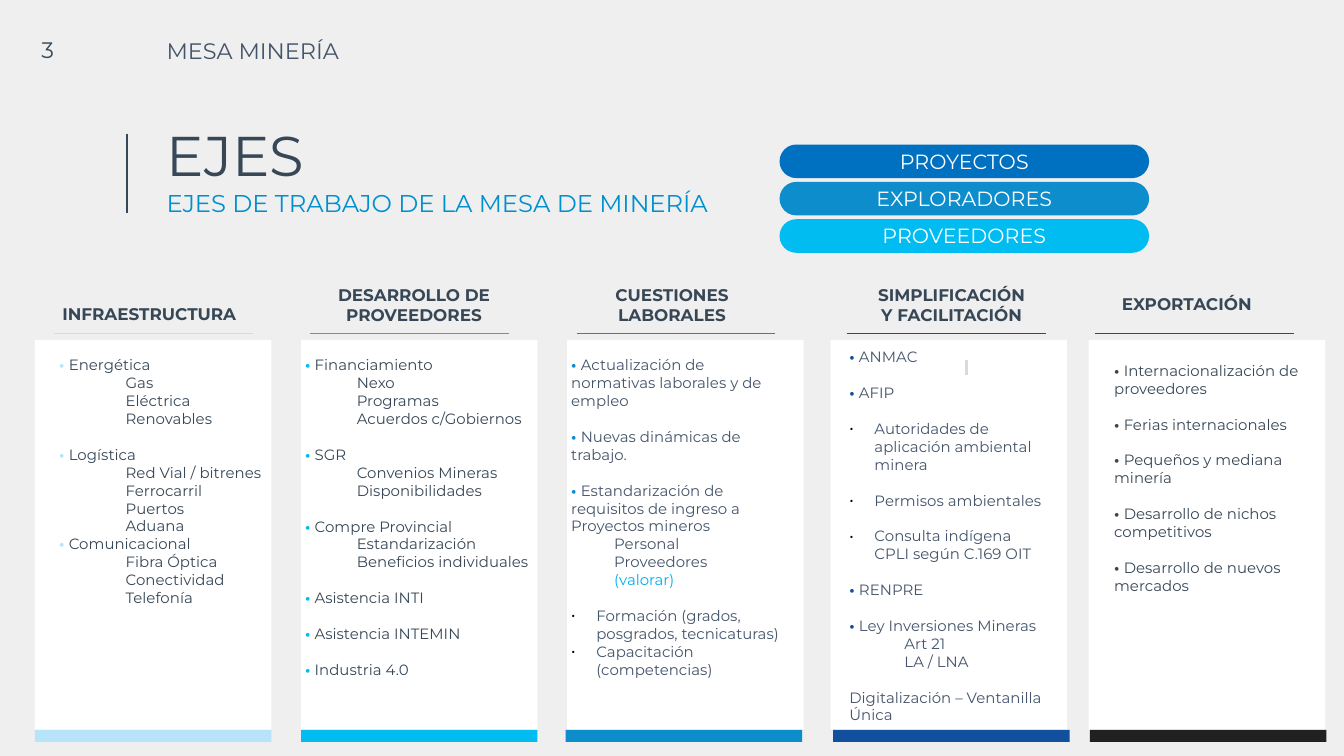
from lxml.etree import SubElement
from pptx import Presentation
from pptx.dml.color import RGBColor
from pptx.enum.shapes import MSO_CONNECTOR, MSO_SHAPE
from pptx.enum.text import MSO_ANCHOR, PP_ALIGN
from pptx.oxml.ns import qn
from pptx.util import Inches, Pt

THEME = {
    "font": "Montserrat",
    "background": "EFEFEF", "panel": "FFFFFF", "dark": "374756", "slate": "44546A",
    "subtitle": "0090D0", "note": "00B0F0", "bullet": "000000", "tick": "D9D9D9",
    "pale": "B8E4FA", "cyan": "00BCF1", "blue": "0D8DCC", "navy": "10509E",
    "black": "212121", "royal": "0070C0",
    "title_size": 30, "subtitle_size": 13, "label_size": 12, "pill_size": 11,
    "heading_size": 9, "body_size": 8, "group_gap": 9.6,
}

SLIDE_WIDTH = 10
SLIDE_HEIGHT = SLIDE_WIDTH * 9 / 16
GRID_COLUMNS = 100
UNIT = SLIDE_WIDTH / GRID_COLUMNS

PANEL = {"top": 25.3, "width": 17.6, "height": 29}
BAND = {"top": 54.3, "height": 0.9}
RULE = {"top": 24.8, "width": 14.8}
PILL = {"left": 58, "top": 10.75, "width": 27.5, "height": 2.5, "pitch": 2.78}
POINT_INDENT = 1.87

LEAD, SUB, POINT, PLAIN, NOTE = "lead", "sub", "point", "plain", "note"

PILLS = [("PROYECTOS", "royal"), ("EXPLORADORES", "blue"), ("PROVEEDORES", "cyan")]

COLUMNS = [
    {
        "heading": "INFRAESTRUCTURA", "heading_box": (3.6, 21.9, 15, 2.9),
        "panel": 2.6, "band": 2.6, "rule": 4, "body_box": (3.9, 26, 16.2, 23.5),
        "accent": "pale", "rule_color": "pale", "text_color": "dark", "sub_indent": 4.95,
        "groups": [
            [(LEAD, "Energética"), (SUB, "Gas"), (SUB, "Eléctrica"), (SUB, "Renovables")],
            [(LEAD, "Logística"), (SUB, "Red Vial / bitrenes"), (SUB, "Ferrocarril"),
             (SUB, "Puertos"), (SUB, "Aduana"), (LEAD, "Comunicacional"),
             (SUB, "Fibra Óptica"), (SUB, "Conectividad"), (SUB, "Telefonía")],
        ],
    },
    {
        "heading": "DESARROLLO DE PROVEEDORES", "heading_box": (23.1, 20.6, 15.4, 4.2),
        "panel": 22.4, "band": 22.4, "rule": 23.1, "body_box": (22.2, 26, 18.6, 26.2),
        "accent": "cyan", "rule_color": "cyan", "text_color": "dark", "sub_indent": 3.85,
        "groups": [
            [(LEAD, "Financiamiento"), (SUB, "Nexo"), (SUB, "Programas"),
             (SUB, "Acuerdos c/Gobiernos")],
            [(LEAD, "SGR"), (SUB, "Convenios Mineras"), (SUB, "Disponibilidades")],
            [(LEAD, "Compre Provincial"), (SUB, "Estandarización"),
             (SUB, "Beneficios individuales")],
            [(LEAD, "Asistencia INTI")],
            [(LEAD, "Asistencia INTEMIN")],
            [(LEAD, "Industria 4.0")],
        ],
    },
    {
        "heading": "CUESTIONES LABORALES", "heading_box": (42.3, 20.6, 15.4, 4.2),
        "panel": 42.2, "band": 42.1, "rule": 42.9, "body_box": (42, 26, 17.2, 26.3),
        "accent": "blue", "rule_color": "blue", "text_color": "slate", "sub_indent": 3.2,
        "groups": [
            [(LEAD, "Actualización de normativas laborales y de empleo")],
            [(LEAD, "Nuevas dinámicas de trabajo.")],
            [(LEAD, "Estandarización de requisitos de ingreso a Proyectos mineros"),
             (SUB, "Personal"), (SUB, "Proveedores"), (NOTE, "(valorar)")],
            [(POINT, "Formación (grados, posgrados, tecnicaturas)"),
             (POINT, "Capacitación (competencias)")],
        ],
    },
    {
        "heading": "SIMPLIFICACIÓN\nY FACILITACIÓN", "heading_box": (63.1, 20.6, 15.4, 4.2),
        "panel": 61.8, "band": 62, "rule": 63, "body_box": (62.7, 25.4, 15.4, 28.7),
        "accent": "navy", "rule_color": "navy", "text_color": "slate", "sub_indent": 4.1,
        "groups": [
            [(LEAD, "ANMAC")],
            [(LEAD, "AFIP")],
            [(POINT, "Autoridades de aplicación ambiental minera")],
            [(POINT, "Permisos ambientales")],
            [(POINT, "Consulta indígena CPLI según C.169 OIT")],
            [(LEAD, "RENPRE")],
            [(LEAD, "Ley Inversiones Mineras"), (SUB, "Art 21"), (SUB, "LA / LNA")],
            [(PLAIN, "Digitalización – Ventanilla Única")],
        ],
    },
    {
        "heading": "EXPORTACIÓN", "heading_box": (78.6, 20.5, 19.4, 4.2),
        "panel": 81, "band": 81.1, "rule": 81.5, "body_box": (82.4, 26.4, 15.4, 23.1),
        "accent": "black", "rule_color": "navy", "text_color": "dark", "sub_indent": 0,
        "lead_color": "dark",
        "groups": [
            [(LEAD, "Internacionalización de proveedores")],
            [(LEAD, "Ferias internacionales")],
            [(LEAD, "Pequeños y mediana minería")],
            [(LEAD, "Desarrollo de nichos competitivos")],
            [(LEAD, "Desarrollo de nuevos mercados")],
        ],
    },
]


def grid(value):
    return Inches(value * UNIT)


def color(name):
    return RGBColor.from_string(THEME[name])


def apply_format(target, values):
    for name, value in values.items():
        setattr(target, name, value)


def add_run(paragraph, text, size, color_name, bold=False):
    for index, line in enumerate(text.split("\n")):
        if index:
            paragraph.add_line_break()
        run = paragraph.add_run()
        run.text = line
        apply_format(run.font, {"name": THEME["font"], "size": Pt(THEME[size]), "bold": bold})
        run.font.color.rgb = color(color_name)


def add_text_box(slide, box, inset=0.5, anchor=MSO_ANCHOR.TOP):
    frame = slide.shapes.add_textbox(*map(grid, box)).text_frame
    margins = {f"margin_{side}": grid(inset) for side in ("left", "top", "right", "bottom")}
    apply_format(frame, {"word_wrap": True, "vertical_anchor": anchor, **margins})
    return frame


def add_label(slide, box, text, size, color_name, bold=False, align=PP_ALIGN.LEFT, **frame_format):
    paragraph = add_text_box(slide, box, **frame_format).paragraphs[0]
    paragraph.alignment = align
    add_run(paragraph, text, size, color_name, bold)


def add_block(slide, kind, box, fill):
    shape = slide.shapes.add_shape(kind, *map(grid, box))
    shape.shadow.inherit = False
    shape.fill.solid()
    shape.fill.fore_color.rgb = color(fill)
    shape.line.fill.background()
    return shape


def add_line(slide, ends, color_name, width=0.75):
    connector = slide.shapes.add_connector(MSO_CONNECTOR.STRAIGHT, *map(grid, ends))
    connector.line.color.rgb = color(color_name)
    connector.line.width = Pt(width)
    SubElement(connector._element.spPr, qn("a:effectLst"))


def indent_paragraph(paragraph, left, bulleted=False):
    properties = paragraph._p.get_or_add_pPr()
    properties.set("marL", str(grid(left)))
    properties.set("indent", str(-grid(left) if bulleted else 0))
    if bulleted:
        bullet_color = SubElement(properties, qn("a:buClr"))
        SubElement(bullet_color, qn("a:srgbClr"), val=THEME["bullet"])
        SubElement(properties, qn("a:buFont"), typeface=THEME["font"])
        SubElement(properties, qn("a:buChar"), char="•")


def add_body(slide, column):
    frame = add_text_box(slide, column["body_box"])
    paragraph = frame.paragraphs[0]
    for group_index, group in enumerate(column["groups"]):
        for item_index, (kind, text) in enumerate(group):
            if group_index or item_index:
                paragraph = frame.add_paragraph()
            if group_index and not item_index:
                paragraph.space_before = Pt(THEME["group_gap"])
            if kind in (SUB, NOTE):
                indent_paragraph(paragraph, column["sub_indent"])
            elif kind == POINT:
                indent_paragraph(paragraph, POINT_INDENT, bulleted=True)
            elif kind == LEAD:
                lead_color = column.get("lead_color", column["accent"])
                add_run(paragraph, "• ", "body_size", lead_color, True)
            text_color = "note" if kind == NOTE else column["text_color"]
            add_run(paragraph, text, "body_size", text_color)


def add_column(slide, column):
    panel = (column["panel"], PANEL["top"], PANEL["width"], PANEL["height"])
    band = (column["band"], BAND["top"], PANEL["width"], BAND["height"])
    add_block(slide, MSO_SHAPE.RECTANGLE, panel, "panel")
    add_block(slide, MSO_SHAPE.RECTANGLE, band, column["accent"])
    rule_end = column["rule"] + RULE["width"]
    add_line(slide, (column["rule"], RULE["top"], rule_end, RULE["top"]), column["rule_color"])
    add_label(slide, column["heading_box"], column["heading"], "heading_size", "dark", True,
              PP_ALIGN.CENTER, inset=1, anchor=MSO_ANCHOR.MIDDLE)
    add_body(slide, column)


def add_pill(slide, index, text, fill):
    top = PILL["top"] + index * PILL["pitch"]
    shape = add_block(slide, MSO_SHAPE.ROUNDED_RECTANGLE,
                      (PILL["left"], top, PILL["width"], PILL["height"]), fill)
    shape.adjustments[0] = 0.5
    add_label(slide, (PILL["left"], top - 0.6, PILL["width"], 3.6), text, "pill_size", "panel",
              align=PP_ALIGN.CENTER, inset=1)


def main():
    presentation = Presentation()
    apply_format(presentation, {"slide_width": Inches(SLIDE_WIDTH),
                                "slide_height": Inches(SLIDE_HEIGHT)})
    slide = presentation.slides.add_slide(presentation.slide_layouts[6])
    slide.background.fill.solid()
    slide.background.fill.fore_color.rgb = color("background")

    add_label(slide, (1.9, 1.7, 3.1, 3.9), "3", "label_size", "dark",
              align=PP_ALIGN.RIGHT, inset=1, anchor=MSO_ANCHOR.MIDDLE)
    add_label(slide, (11.9, 2.3, 33, 2.9), "MESA MINERÍA", "label_size", "slate")
    title = add_text_box(slide, (11.9, 8.5, 48, 8.1))
    add_run(title.paragraphs[0], "EJES", "title_size", "dark")
    add_run(title.add_paragraph(), "EJES DE TRABAJO DE LA MESA DE MINERÍA",
            "subtitle_size", "subtitle")
    add_line(slide, (9.45, 9.95, 9.45, 15.85), "dark")

    for column in COLUMNS:
        add_column(slide, column)
    for index, (text, fill) in enumerate(PILLS):
        add_pill(slide, index, text, fill)
    add_line(slide, (71.9, 26.8, 71.9, 27.9), "tick", 1.5)
    presentation.save("out.pptx")


if __name__ == "__main__":
    main()
